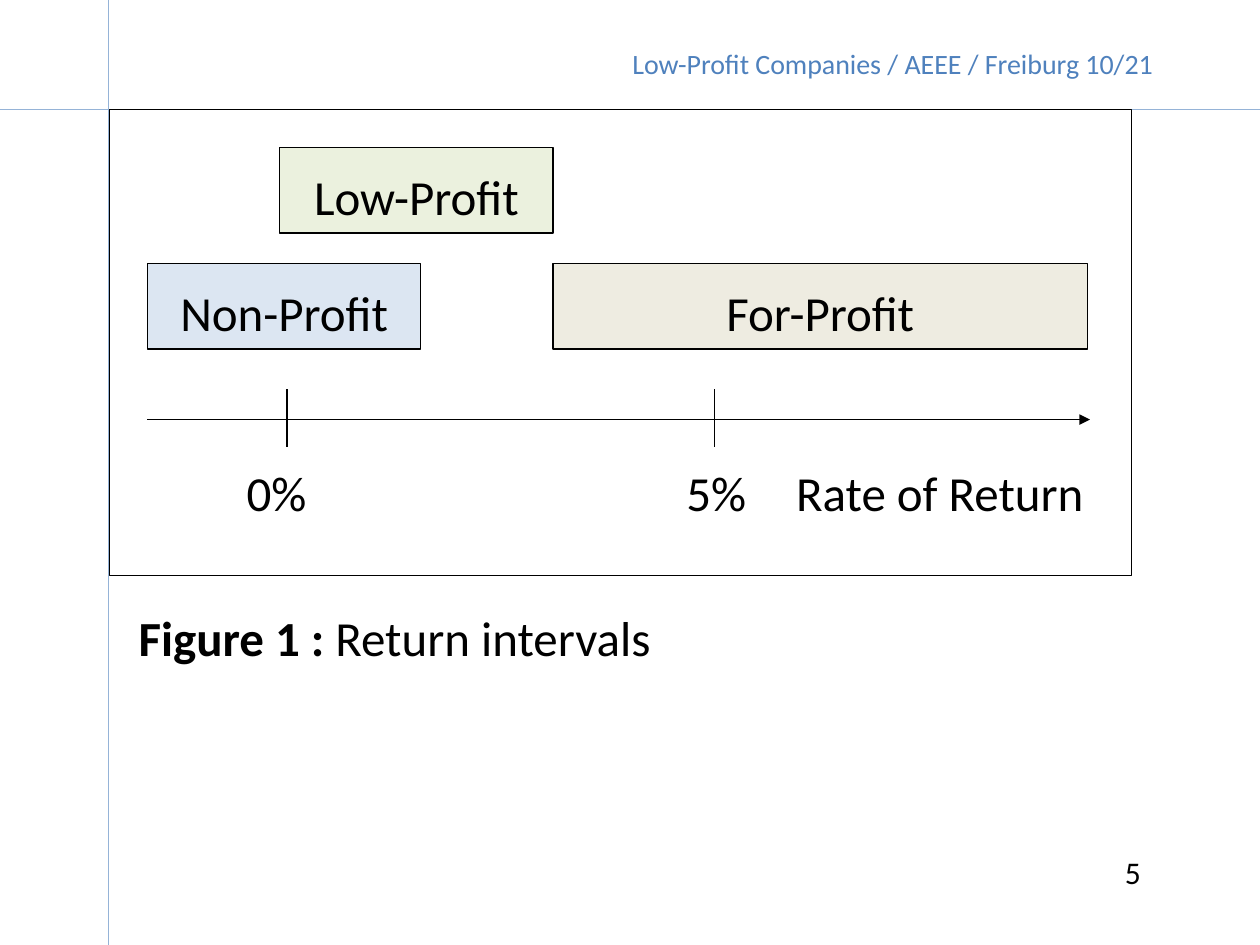
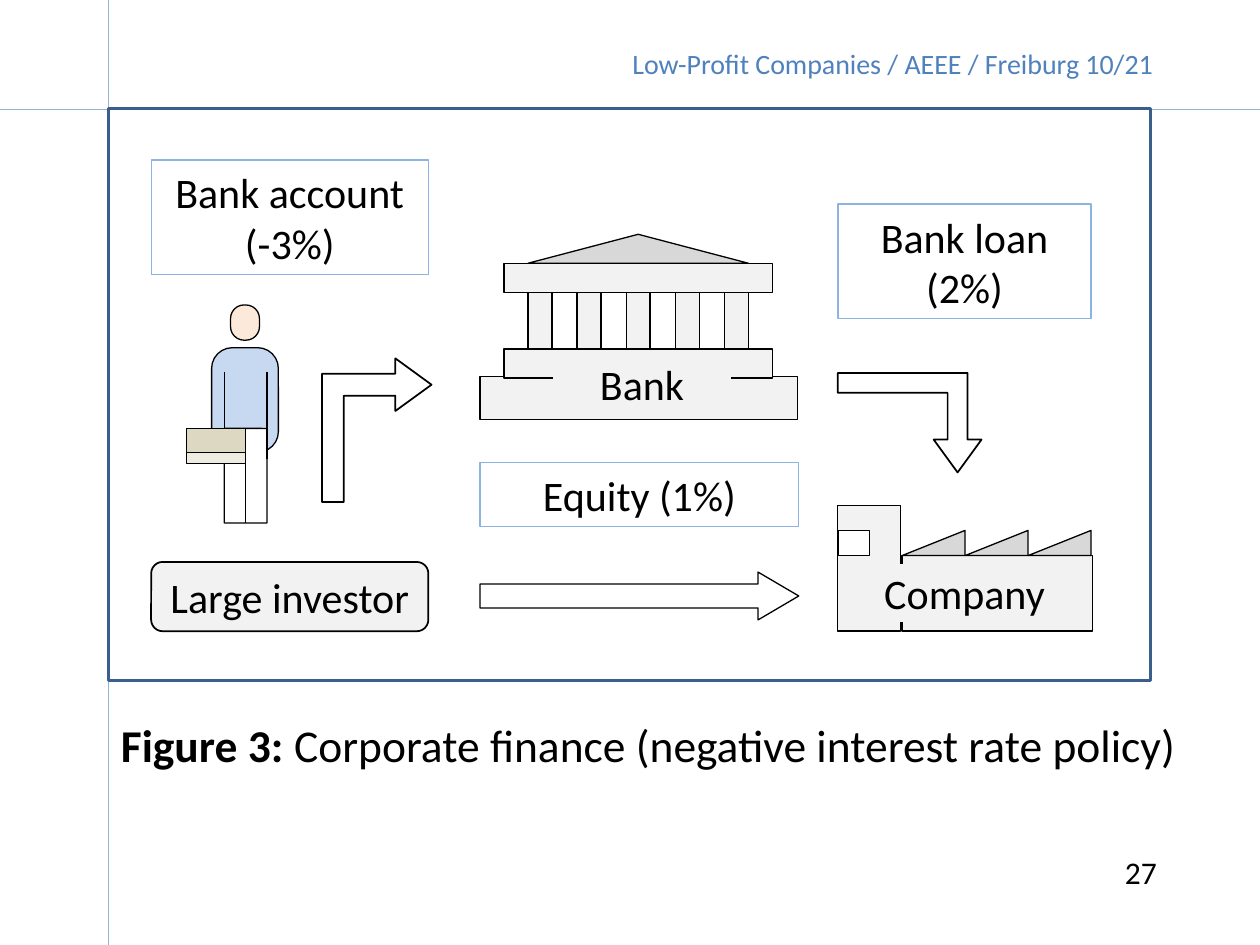
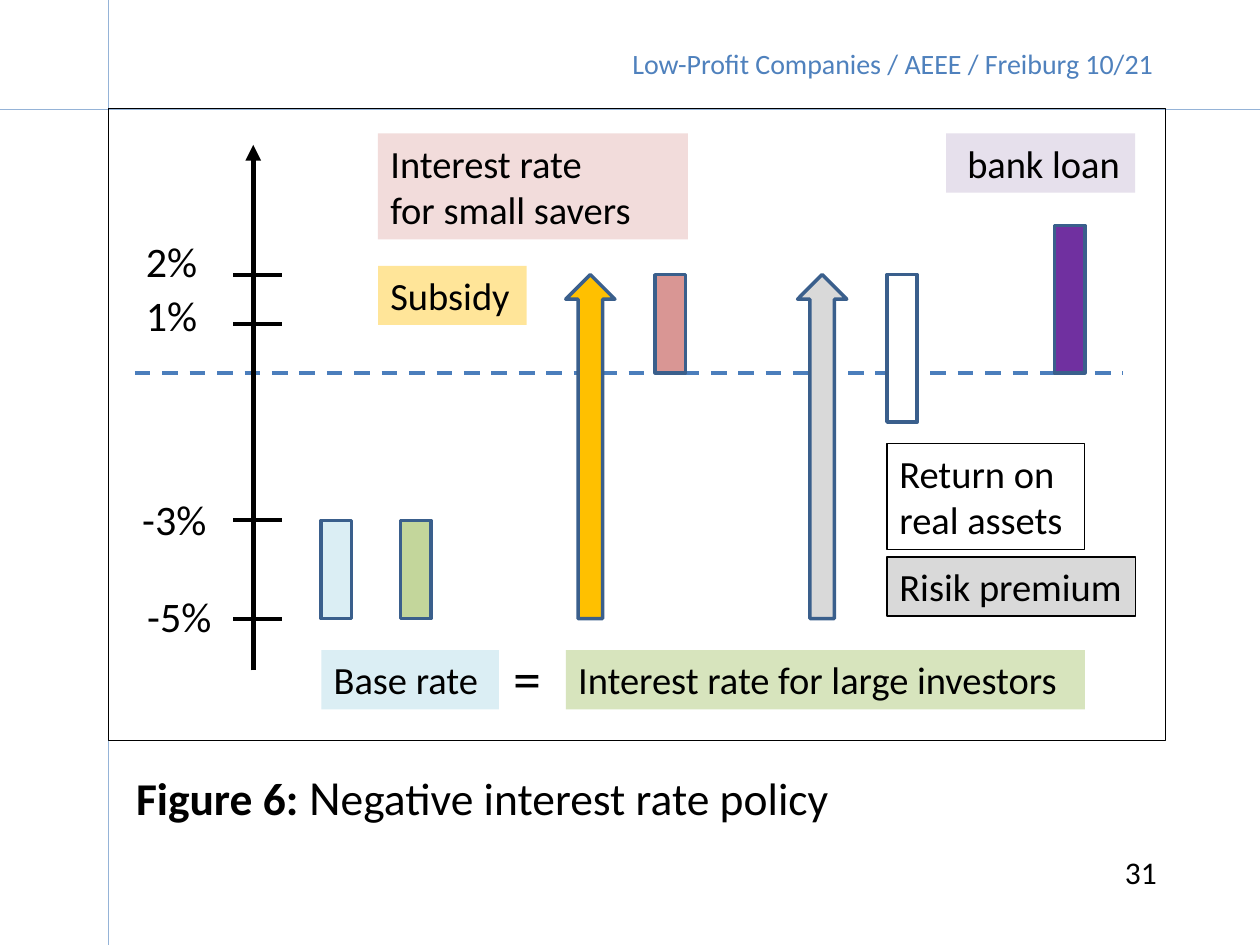
import pptx
import pptx.util
import pptx.dml.color
import pptx.enum.dml
import pptx.enum.shapes
import pptx.enum.text
import pptx.oxml
import pptx.oxml.ns
import lxml.etree

Inches, Pt = pptx.util.Inches, pptx.util.Pt
RGBColor = pptx.dml.color.RGBColor
SHAPE = pptx.enum.shapes.MSO_SHAPE
ALIGN = pptx.enum.text.PP_ALIGN
ANCHOR = pptx.enum.text.MSO_ANCHOR

# Shared look
FONT = "Calibri"
BLACK = RGBColor(0x00, 0x00, 0x00)
WHITE = RGBColor(0xFF, 0xFF, 0xFF)
GUIDE_BLUE = RGBColor(0x95, 0xB3, 0xD7)
HEADER_BLUE = RGBColor(0x4F, 0x81, 0xBD)
OUTLINE_BLUE = RGBColor(0x3A, 0x5F, 0x8C)
LABEL_BLUE = RGBColor(0x8D, 0xB3, 0xE2)
ZERO_BLUE = RGBColor(0x4B, 0x7E, 0xBC)
# Return intervals
LOW_GREEN = RGBColor(0xEB, 0xF1, 0xDE)
FOR_BEIGE = RGBColor(0xEE, 0xEC, 0xE1)
NON_BLUE = RGBColor(0xDC, 0xE6, 0xF2)
# Corporate finance
WALL_GREY = RGBColor(0xF2, 0xF2, 0xF2)
ROOF_GREY = RGBColor(0xD8, 0xD8, 0xD8)
SKIN = RGBColor(0xFD, 0xE9, 0xD9)
SHIRT_BLUE = RGBColor(0xC6, 0xD9, 0xF1)
CASE_TAN = RGBColor(0xDD, 0xD8, 0xC2)
# Interest rates
BASE_BLUE = RGBColor(0xDB, 0xEE, 0xF4)
LOAN_PURPLE = RGBColor(0x70, 0x30, 0xA0)
LOAN_LILAC = RGBColor(0xE6, 0xE0, 0xEC)
SAVER_RED = RGBColor(0xD9, 0x96, 0x94)
SAVER_PINK = RGBColor(0xF2, 0xDC, 0xDB)
SUBSIDY_GOLD = RGBColor(0xFF, 0xC0, 0x00)
PREMIUM_GREY = RGBColor(0xD9, 0xD9, 0xD9)
INVESTOR_GREEN = RGBColor(0xC3, 0xD6, 0x9B)
INVESTOR_LIGHT = RGBColor(0xD7, 0xE4, 0xBD)

HEADER = "Low-Profit Companies / AEEE / Freiburg 10/21"
MARGIN = 0.86  # crossing point of the guide lines


def set_font(paragraph, size, color=BLACK):
    paragraph.font.name = FONT
    paragraph.font.size = Pt(size)
    paragraph.font.color.rgb = color


class Region:
    """Part of a slide whose positions count from its own top left corner."""

    def __init__(self, slide, left=0, top=0):
        self.slide, self.left, self.top = slide, left, top

    def at(self, left, top):
        return Region(self.slide, self.left + left, self.top + top)

    def place(self, left, top, width, height):
        return (Inches(self.left + left), Inches(self.top + top),
                Inches(width), Inches(height))

    def shape(self, kind, box, fill=None, line=BLACK, weight=0.75, adj=(), flip=None):
        shape = self.slide.shapes.add_shape(kind, *self.place(*box))
        shape.shadow.inherit = False
        if fill is None:
            shape.fill.background()
        else:
            shape.fill.solid()
            shape.fill.fore_color.rgb = fill
        if line is None:
            shape.line.fill.background()
        else:
            shape.line.color.rgb = line
            shape.line.width = Pt(weight)
        for index, value in enumerate(adj):
            shape.adjustments[index] = value
        if flip:
            shape._element.spPr.xfrm.set(flip, "1")
        return shape

    def rect(self, box, fill=None, line=BLACK, weight=0.75):
        return self.shape(SHAPE.RECTANGLE, box, fill, line, weight)

    def text(self, box, words, size, color=BLACK):
        return write(self.slide.shapes.add_textbox(*self.place(*box)),
                     words, size, color=color)

    def line(self, start, end, color=BLACK, weight=1.0, arrow=False, dash=None):
        line = self.slide.shapes.add_connector(
            pptx.enum.shapes.MSO_CONNECTOR.STRAIGHT,
            Inches(self.left + start[0]), Inches(self.top + start[1]),
            Inches(self.left + end[0]), Inches(self.top + end[1]))
        line.line.color.rgb = color
        line.line.width = Pt(weight)
        if dash:
            line.line.dash_style = dash
        if arrow:
            tail = lxml.etree.SubElement(line.line._get_or_add_ln(),
                                         pptx.oxml.ns.qn("a:tailEnd"))
            tail.set("type", "triangle")
        lxml.etree.SubElement(line._element.spPr, pptx.oxml.ns.qn("a:effectLst"))


def write(shape, words, size, align=ALIGN.LEFT, anchor=ANCHOR.TOP, color=BLACK):
    frame = shape.text_frame
    frame.word_wrap = True
    frame.vertical_anchor = anchor
    frame.margin_right = 0
    if align == ALIGN.CENTER:
        frame.margin_left = 0
    frame.text = words
    for paragraph in frame.paragraphs:
        paragraph.alignment = align
        set_font(paragraph, size, color)
    return shape


def centre(shape, words, size=24):
    return write(shape, words, size, ALIGN.CENTER, ANCHOR.MIDDLE)


def add_slide(deck, number, caption_box, caption_runs):
    """Add guide lines, header, page number and figure caption."""
    slide = deck.slides.add_slide(deck.slide_layouts[1])
    title = slide.shapes.title._element
    title.getparent().remove(title)
    page = Region(slide)
    page.line((MARGIN, 7.5), (MARGIN, 0), GUIDE_BLUE, 0.75)
    page.line((0, 0.87), (10, 0.87), GUIDE_BLUE, 0.75)
    page.text((4.92, 0.32, 4.41, 0.37), HEADER, 16, HEADER_BLUE)
    page.text((8.83, 6.72, 0.69, 0.4), str(number), 18)

    caption = slide.placeholders[1]
    caption.left, caption.top, caption.width, caption.height = page.place(*caption_box)
    caption.text_frame.auto_size = pptx.enum.text.MSO_AUTO_SIZE.NONE
    paragraph = caption.text_frame.paragraphs[0]
    paragraph.space_before = Pt(0)
    properties = paragraph._p.get_or_add_pPr()
    properties.set("marL", "0")
    properties.set("indent", "0")
    lxml.etree.SubElement(properties, pptx.oxml.ns.qn("a:buNone"))
    for index, (words, size) in enumerate(caption_runs):
        run = paragraph.add_run()
        run.text = words
        run.font.name, run.font.size = FONT, Pt(size)
        run.font.bold = index == 0
        run.font.color.rgb = BLACK
    return Region(slide, MARGIN, MARGIN)


# Figure 1
def draw_return_intervals(figure):
    figure.rect((0.01, 0.01, 8.11, 3.7))

    def spaced(shape, words, align):
        write(shape, words, 28, align, ANCHOR.MIDDLE)
        paragraph = shape.text_frame.paragraphs[0]
        paragraph.line_spacing = 1.2
        paragraph.space_before = Pt(6)

    for words, left, width in (("0%", 1.0, 0.81), ("5%", 4.49, 0.84),
                               ("Rate of Return", 5.36, 2.63)):
        spaced(figure.rect((left, 2.68, width, 0.64), WHITE, None), words, ALIGN.LEFT)
    for words, left, top, width, fill in (
            ("Low-Profit", 1.36, 0.31, 2.17, LOW_GREEN),
            ("For-Profit", 3.53, 1.23, 4.24, FOR_BEIGE),
            ("Non-Profit", 0.31, 1.23, 2.17, NON_BLUE)):
        spaced(figure.rect((left, top, width, 0.68), fill), words, ALIGN.CENTER)
    for tick in (1.42, 4.81):
        figure.line((tick, 2.23), (tick, 2.69))
    figure.line((0.31, 2.47), (7.79, 2.47), arrow=True)


# Figure 3
def draw_company(company):
    company.rect((0.51, 0.4, 1.51, 0.6), WALL_GREY)
    company.rect((0, 0, 0.5, 1), WALL_GREY)
    company.rect((0, 0.2, 0.25, 0.2), WHITE)
    for roof in range(3):
        company.shape(SHAPE.RIGHT_TRIANGLE, (0.51 + roof * 0.5, 0.2, 0.5, 0.2),
                      ROOF_GREY, flip="flipH")
    centre(company.rect((0.03, 0.47, 1.95, 0.45), WALL_GREY, WALL_GREY), "Company")


def draw_investor(investor):
    rounded = SHAPE.ROUNDED_RECTANGLE
    investor.shape(rounded, (0.35, 0, 0.23, 0.28), SKIN, adj=[0.47])
    investor.shape(rounded, (0.2, 0.34, 0.53, 0.83), SHIRT_BLUE, adj=[0.31])
    investor.shape(rounded, (0.3, 0.98, 0.34, 0.75), WHITE, adj=[0.01])
    for x, top, bottom in ((0.3, 0.53, 1.22), (0.47, 1.17, 1.73), (0.64, 0.53, 1.22)):
        investor.line((x, top), (x, bottom), weight=0.75)
    # Briefcase
    investor.rect((0, 0.98, 0.47, 0.28), FOR_BEIGE)
    investor.rect((0, 0.98, 0.47, 0.19), CASE_TAN)


def draw_bank(bank):
    bank.rect((0.19, 0.23, 2.13, 0.23), WALL_GREY)
    for column in range(5):
        bank.rect((0.38 + column * 0.39, 0.46, 0.19, 0.46), WALL_GREY)
    bank.shape(SHAPE.ISOSCELES_TRIANGLE, (0.38, 0, 1.75, 0.23), ROOF_GREY)
    bank.rect((0, 1.13, 2.52, 0.34), WALL_GREY)
    bank.rect((0.19, 0.91, 2.13, 0.23), WALL_GREY)
    centre(bank.rect((0.58, 0.95, 1.41, 0.47), WALL_GREY, WALL_GREY), "Bank")


def draw_corporate_finance(figure):
    figure.rect((0, 0, 8.27, 4.54), line=OUTLINE_BLUE, weight=2)
    draw_company(figure.at(5.79, 3.15))
    for words, box in (("Equity (1%)", (2.95, 2.81, 2.53, 0.51)),
                       ("Bank account\v(-3%)", (0.34, 0.41, 2.2, 0.91)),
                       ("Bank loan\n(2%)", (5.79, 0.76, 2.01, 0.91))):
        centre(figure.rect(box, WHITE, LABEL_BLUE), words)
    centre(figure.shape(SHAPE.ROUNDED_RECTANGLE, (0.34, 3.6, 2.2, 0.55),
                        WALL_GREY, weight=1), "Large investor")
    draw_investor(figure.at(0.62, 1.56))
    draw_bank(figure.at(2.95, 1.0))

    # Flows of money
    figure.shape(SHAPE.RIGHT_ARROW, (2.95, 3.68, 2.53, 0.38), WHITE, adj=[0.5, 0.85])
    for box, rotation in (((1.56, 2.12, 1.14, 0.87), 270),
                          ((5.79, 2.1, 1.14, 0.79), 0)):
        flow = figure.shape(SHAPE.BENT_UP_ARROW, box, WHITE, weight=1,
                            adj=[0.2, 0.24, 0.33], flip="flipV")
        flow.rotation = rotation


# Figure 6
def draw_interest_rates(figure):
    zero, percent = 2.1, 0.39

    def height_of(rate):
        return zero - rate * percent

    def span(left, width, low, high):
        return left, height_of(high), width, (high - low) * percent

    def label(words, box, fill, line=None):
        return write(figure.rect(box, fill, line), words, 22)

    figure.rect((0, 0, 8.39, 5.02))
    figure.line((0.21, zero), (8.05, zero), ZERO_BLUE, 2.25,
                dash=pptx.enum.dml.MSO_LINE.DASH)

    # Rate axis
    figure.line((1.15, 4.46), (1.15, 0.29), weight=3, arrow=True)
    for rate, left, rise in ((-5, 0.21, 0.27), (-3, 0.17, 0.26),
                             (1, 0.2, 0.32), (2, 0.2, 0.36)):
        y = height_of(rate)
        figure.text((left, y - rise, 0.78, 0.5), f"{rate}%", 24)
        figure.line((0.99, y), (1.38, y), weight=2.25)

    # Bars and arrows between two rates
    for left, low, high, fill in ((1.69, -5, -3, BASE_BLUE), (2.32, -5, -3, INVESTOR_GREEN),
                                  (4.34, 0, 2, SAVER_RED), (6.18, -1, 2, WHITE),
                                  (7.51, 0, 3, LOAN_PURPLE)):
        figure.rect(span(left, 0.24, low, high), fill, OUTLINE_BLUE, 2)
    for left, fill in ((3.63, SUBSIDY_GOLD), (5.47, PREMIUM_GREY)):
        figure.shape(SHAPE.DOWN_ARROW, span(left, 0.39, -5, 2), fill,
                     OUTLINE_BLUE, 2, flip="flipV")

    # Labels
    label(" bank loan", (6.65, 0.2, 1.5, 0.47), LOAN_LILAC)
    label("Interest rate\vfor small savers", (2.14, 0.2, 2.46, 0.84), SAVER_PINK)
    subsidy = label("Subsidy", (2.14, 1.25, 1.18, 0.47), SUBSIDY_GOLD)
    tint = subsidy._element.spPr.find(".//" + pptx.oxml.ns.qn("a:srgbClr"))
    lxml.etree.SubElement(tint, pptx.oxml.ns.qn("a:alpha")).set("val", "40000")
    label("Return on\vreal assets", (6.18, 2.66, 1.57, 0.84), None, BLACK)
    label("Risik premium", (6.18, 3.56, 1.97, 0.47), PREMIUM_GREY, BLACK)
    label("Base rate", (1.69, 4.3, 1.41, 0.47), BASE_BLUE)
    figure.text((3.12, 4.2, 0.41, 0.64), "=", 32)
    label("Interest rate for large investors", (3.63, 4.3, 4.12, 0.47), INVESTOR_LIGHT)


def main():
    deck = pptx.Presentation()
    deck.slide_width, deck.slide_height = Inches(10), Inches(7.5)
    draw_return_intervals(add_slide(
        deck, 5, (1, 4.77, 5.25, 0.83),
        [("Figure 1 :", 28), (" Return intervals", 28)]))
    draw_corporate_finance(add_slide(
        deck, 27, (0.86, 5.64, 8.66, 0.54),
        [("Figure 3: ", 26), ("Corporate finance (negative interest rate policy)", 26)]))
    draw_interest_rates(add_slide(
        deck, 31, (0.98, 6.03, 8.54, 0.79),
        [("Figure 6: ", 26), ("N", 28), ("egative interest rate policy", 26)]))
    deck.save("out.pptx")


if __name__ == "__main__":
    main()
